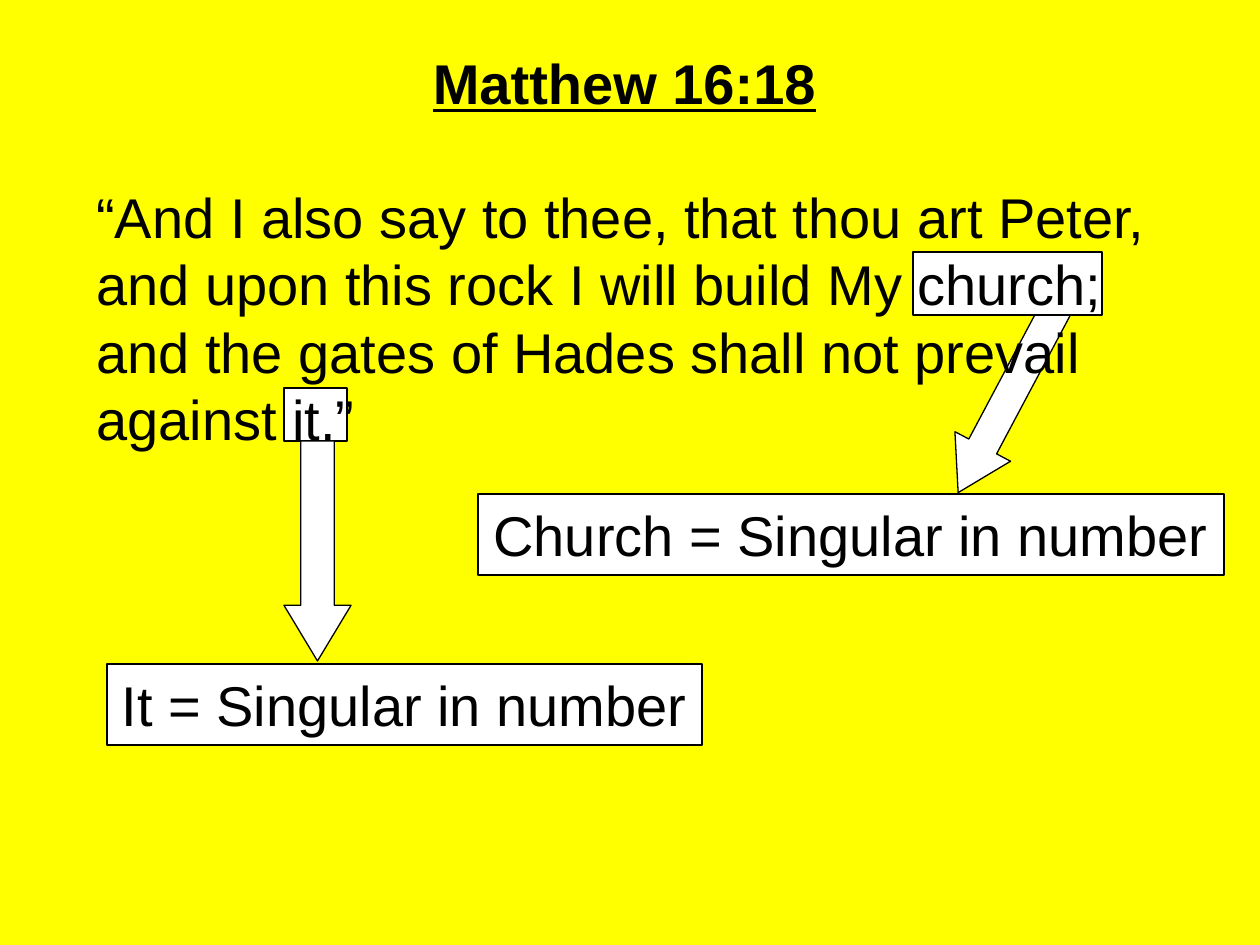
import pptx
import pptx.util
import pptx.dml.color
import pptx.enum.shapes
import pptx.enum.text

EMU_PER_PX = 914400 / 126
SHAPES = pptx.enum.shapes.MSO_SHAPE
ALIGN = pptx.enum.text.PP_ALIGN


def px(length):
    return pptx.util.Emu(round(length * EMU_PER_PX))


def color(value):
    return pptx.dml.color.RGBColor.from_string(value)


class VerseSlide:
    font_name = "Arial"
    font_size = 32
    ink = "000000"
    paper = "FFFFFF"
    background = "FFFF00"

    def __init__(self, presentation):
        self.slide = presentation.slides.add_slide(presentation.slide_layouts[6])
        fill = self.slide.background.fill
        fill.solid()
        fill.fore_color.rgb = color(self.background)

    def style(self, paragraph, alignment, bold=False):
        paragraph.alignment = alignment
        font = paragraph.font
        font.name = self.font_name
        font.size = pptx.util.Pt(self.font_size)
        font.color.rgb = color(self.ink)
        font.bold = bold
        font.underline = bold

    def outlined(self, kind, left, top, width, height):
        shape = self.slide.shapes.add_shape(kind, px(left), px(top), px(width), px(height))
        shape.shadow.inherit = False
        shape.fill.solid()
        shape.fill.fore_color.rgb = color(self.paper)
        shape.line.color.rgb = color(self.ink)
        shape.line.width = pptx.util.Pt(0.75)
        return shape

    def highlight(self, left, top, width, height):
        return self.outlined(SHAPES.RECTANGLE, left, top, width, height)

    def arrow(self, left, top, width, height, rotation=0):
        shape = self.outlined(SHAPES.DOWN_ARROW, left, top, width, height)
        shape.adjustments[0] = 0.5
        shape.adjustments[1] = 0.83
        shape.rotation = rotation
        return shape

    def label(self, text, left, top, width, height):
        shape = self.highlight(left, top, width, height)
        frame = shape.text_frame
        frame.text = text
        frame.word_wrap = False
        frame.vertical_anchor = pptx.enum.text.MSO_ANCHOR.MIDDLE
        self.style(frame.paragraphs[0], ALIGN.CENTER)
        return shape

    def passage(self, heading, verse, left, top, width, height):
        box = self.slide.shapes.add_textbox(px(left), px(top), px(width), px(height))
        frame = box.text_frame
        frame.word_wrap = True
        title = frame.paragraphs[0]
        title.text = heading
        self.style(title, ALIGN.CENTER, bold=True)
        title.space_after = pptx.util.Pt(38.4)
        body = frame.add_paragraph()
        body.text = verse
        self.style(body, ALIGN.LEFT)

    def group(self, *members):
        self.slide.shapes.add_group_shape(members)


def main():
    presentation = pptx.Presentation()
    presentation.slide_width = px(1260)
    presentation.slide_height = px(945)
    page = VerseSlide(presentation)
    page.group(
        page.arrow(976, 295, 63, 210, rotation=28),
        page.label("Church = Singular in number", 478, 494, 746, 81),
    )
    page.highlight(284, 388, 63, 53)
    page.highlight(913, 252, 189, 63)
    page.passage(
        "Matthew 16:18",
        "“And I also say to thee, that thou art Peter, and upon this rock I will build My church; "
        "and the gates of Hades shall not prevail against it.”",
        84, 42, 1081, 420,
    )
    page.arrow(284, 441, 67, 220)
    page.label("It = Singular in number", 107, 664, 595, 81)
    presentation.save("out.pptx")


if __name__ == "__main__":
    main()
